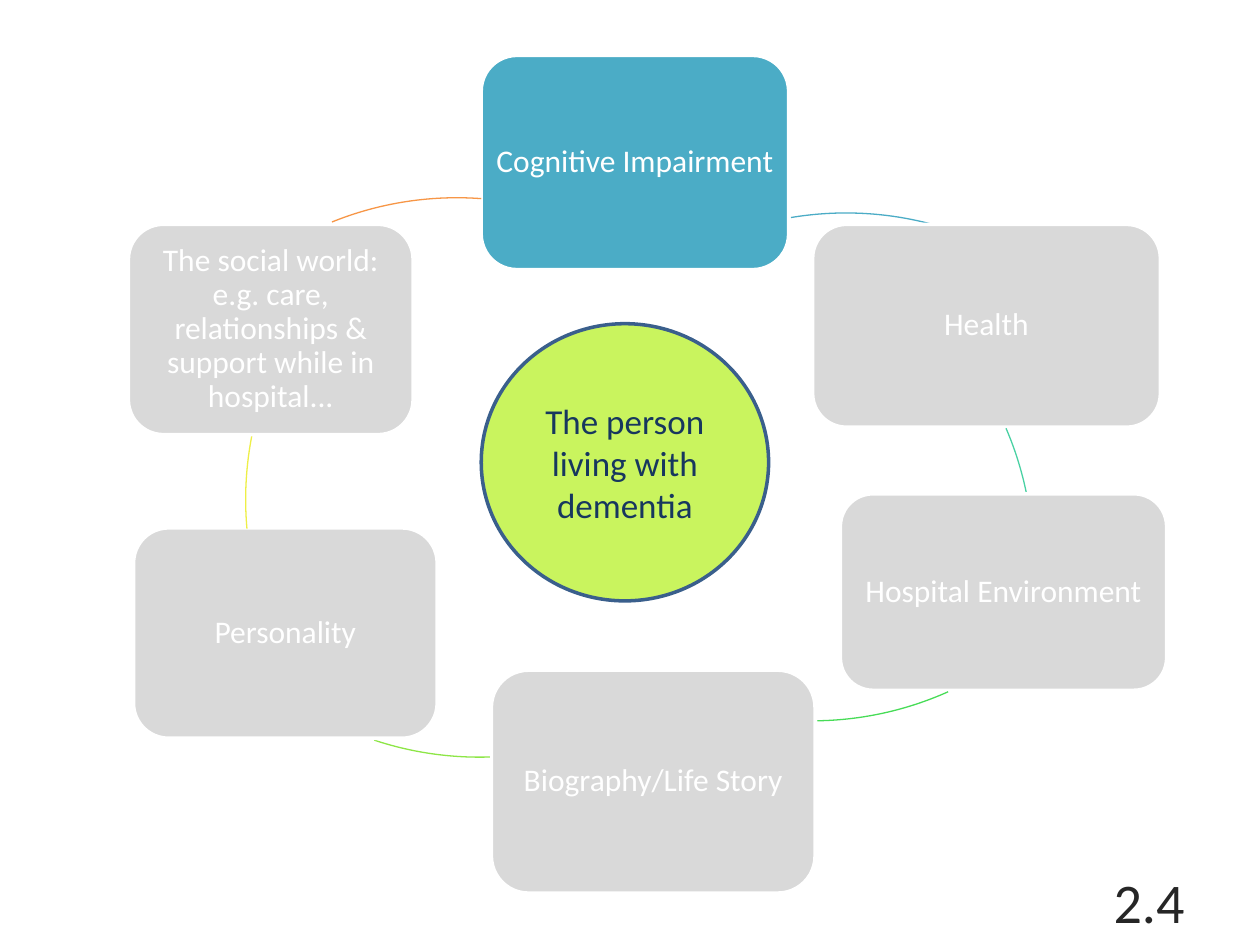
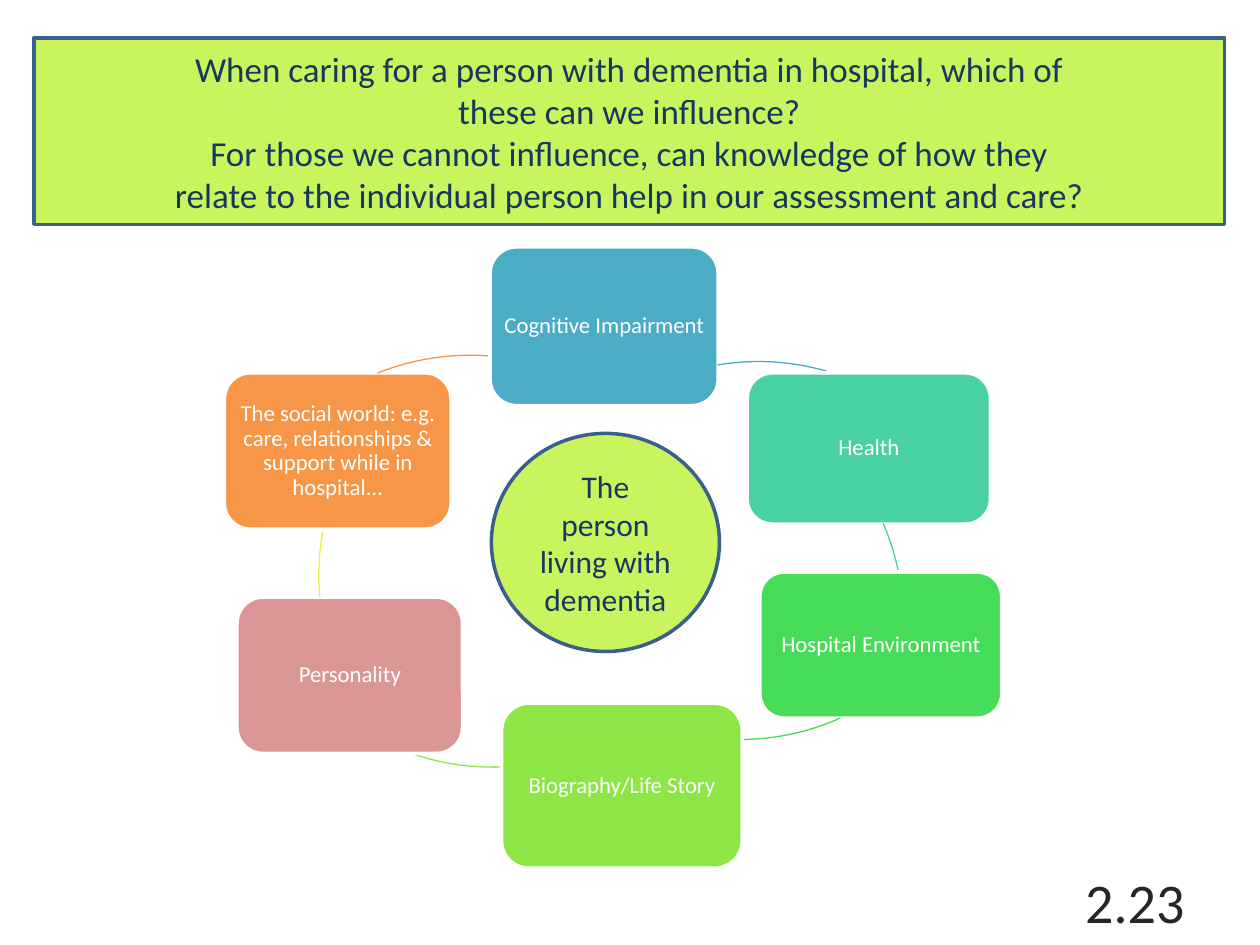
from pptx import Presentation
from pptx.dml.color import RGBColor
from pptx.enum.shapes import MSO_SHAPE as Shape
from pptx.enum.text import MSO_ANCHOR as Anchor, PP_ALIGN as Align
from pptx.util import Pt

FONT = "Calibri"
WHITE = RGBColor(0xFF, 0xFF, 0xFF)
GREY = RGBColor(0xD9, 0xD9, 0xD9)
TEAL = RGBColor(0x4B, 0xAC, 0xC6)
MINT = RGBColor(0x49, 0xD1, 0xA3)
GREEN = RGBColor(0x47, 0xDC, 0x57)
GRASS = RGBColor(0x8D, 0xE6, 0x46)
YELLOW = RGBColor(0xEE, 0xEF, 0x46)
ORANGE = RGBColor(0xF7, 0x96, 0x46)
ROSE = RGBColor(0xD9, 0x96, 0x94)
LIME = RGBColor(0xC9, 0xF4, 0x5E)
NAVY = RGBColor(0x17, 0x37, 0x5E)
BORDER = RGBColor(0x3A, 0x5F, 0x8C)
CHARCOAL = RGBColor(0x26, 0x26, 0x26)

# Factor, colour of its arc, start and end angle of the arc (clockwise)
FACTORS = [
    ("Cognitive Impairment", TEAL, 260.5, 286),
    ("Health", MINT, 336.7, 348.5),
    ("Hospital Environment", GREEN, 65.9, 89.1),
    ("Biography/Life Story", GRASS, 88.2, 108.4),
    ("Personality", YELLOW, 175, 191),
    ("The social world: e.g. care, relationships & support while in hospital...",
     ORANGE, 248, 274.2),
]

# Cycle layouts: places are relative to the origin of the cycle
LARGE_CYCLE = {
    "origin": (72, 30),
    "fills": [TEAL] + [GREY] * 5,
    "boxes": [(203, 1.7, 175.7, 122.4), (392.4, 98.2, 198.7, 115.9),
              (408.2, 252.2, 186.5, 112.3), (208.8, 353, 185, 127.4),
              (4.3, 271.7, 173.5, 120.2), (1.4, 98.2, 162.7, 120.2)],
    "arcs": [(221, 91.7), (137.5, 99.6), (201.6, 1),
             (11.5, 21.8), (68.4, 65), (-1.4, 83)],
    "diameter": 380.9,
    "centre": (203, 155, 164.2, 158.4),
    "sizes": (18, 20),
}
SMALL_CYCLE = {
    "origin": (126, 140),
    "fills": [TEAL, MINT, GREEN, GRASS, ROSE, ORANGE],
    "boxes": [(154.1, 1.1, 130.3, 90.7), (301, 73.1, 139, 86.4),
              (308.2, 186.9, 138.2, 83.5), (160.6, 261.8, 137.5, 94.3),
              (9.4, 201.3, 128.9, 89.3), (2.2, 73.1, 129.6, 89.3)],
    "arcs": [(166.3, 66.6), (108, 73.8), (155.5, 0.4),
             (14.4, 16.2), (56.2, 47.9), (1.4, 63)],
    "diameter": 282.2,
    "centre": (154.8, 107.7, 130.3, 124.6),
    "sizes": (13, 18),
}

QUESTION = ("When caring for a person with dementia in hospital, which of\v"
            "these can we influence?\v"
            "For those we cannot influence, can knowledge of how they\v"
            "relate to the individual person help in our assessment and care?")
QUESTION_BOX = (19.4, 21.6, 680.4, 106.6)
NUMBER_BOX = (516.2, 500.4, 167.8, 28.8)


def write(shape, text, size, color, align=Align.CENTER):
    frame = shape.text_frame
    frame.text = text
    frame.word_wrap = True
    frame.vertical_anchor = Anchor.MIDDLE
    for para in frame.paragraphs:
        para.alignment = align
        for span in para.runs:
            span.font.name = FONT
            span.font.size = Pt(size)
            span.font.color.rgb = color


def add_shape(page, kind, box, fill, line, width=2):
    shape = page.shapes.add_shape(kind, *map(Pt, box))
    shape.shadow.inherit = False
    if fill is None:
        shape.fill.background()
    else:
        shape.fill.solid()
        shape.fill.fore_color.rgb = fill
    shape.line.color.rgb = line
    shape.line.width = Pt(width)
    return shape


def add_factor(page, box, text, fill, size):
    shape = add_shape(page, Shape.ROUNDED_RECTANGLE, box, fill, WHITE)
    write(shape, text, size, WHITE)
    frame = shape.text_frame
    frame.margin_left = frame.margin_right = 0
    frame.margin_top = frame.margin_bottom = 0
    frame.paragraphs[0].line_spacing = 0.9


def add_arc(page, box, color, start, end):
    arc = add_shape(page, Shape.ARC, box, None, color, 0.75)
    # Adjustments count 60000 units a degree, divided by 100000
    arc.adjustments[0] = start * 0.6
    arc.adjustments[1] = end * 0.6


def add_cycle(page, cycle):
    left, top = cycle["origin"]
    factor_size, centre_size = cycle["sizes"]
    diameter = cycle["diameter"]

    def placed(x, y, width, height):
        return left + x, top + y, width, height

    # Factors, each followed by the arc to the next one
    for (text, color, start, end), fill, box, corner in zip(
            FACTORS, cycle["fills"], cycle["boxes"], cycle["arcs"]):
        add_factor(page, placed(*box), text, fill, factor_size)
        add_arc(page, placed(*corner, diameter, diameter), color, start, end)

    # Person in the middle
    person = add_shape(page, Shape.OVAL, placed(*cycle["centre"]), LIME, BORDER)
    write(person, "The person living with dementia", centre_size, NAVY)


def add_question(page, box):
    banner = add_shape(page, Shape.RECTANGLE, box, LIME, BORDER)
    write(banner, QUESTION, 20, NAVY)


def add_number(page, box, number):
    label = page.shapes.add_textbox(*map(Pt, box))
    write(label, number, 32, CHARCOAL, Align.RIGHT)


def main():
    deck = Presentation()
    deck.slide_width, deck.slide_height = Pt(720), Pt(540)
    blank = deck.slide_layouts[6]

    # Cycle with the first factor highlighted
    page = deck.slides.add_slide(blank)
    add_cycle(page, LARGE_CYCLE)
    add_number(page, NUMBER_BOX, "2.4")

    # Question above the coloured cycle
    page = deck.slides.add_slide(blank)
    add_cycle(page, SMALL_CYCLE)
    add_question(page, QUESTION_BOX)
    add_number(page, NUMBER_BOX, "2.23")

    deck.save("out.pptx")


if __name__ == "__main__":
    main()
